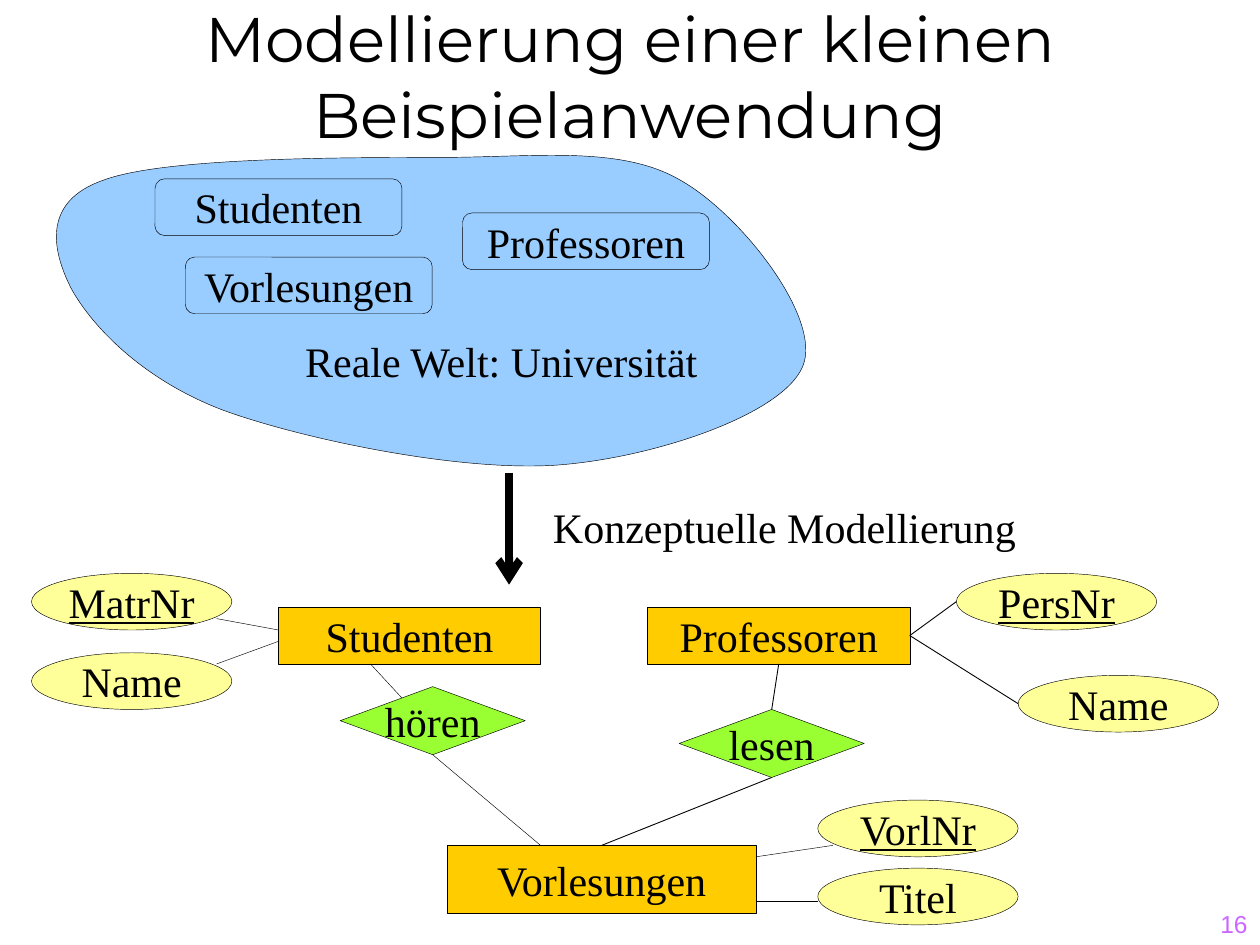
from pptx import Presentation
from pptx.dml.color import RGBColor
from pptx.enum.shapes import MSO_CONNECTOR, MSO_SHAPE
from pptx.enum.text import MSO_ANCHOR, PP_ALIGN
from pptx.oxml.ns import qn
from pptx.util import Pt
from lxml.etree import SubElement

COLORS = {
    "ink": "000000",
    "world": "99CCFF",
    "entity": "FFCC00",
    "attribute": "FFFF99",
    "relationship": "99FF33",
    "page": "CC66FF",
}
SERIF = "Times New Roman"
THIN, MEDIUM = 0.25, 0.5
TOP, BOTTOM, RIGHT = 0, 2, 3


def color(name):
    return RGBColor.from_string(COLORS[name])


def write(shape, text, size=24, font=SERIF, ink="ink", align=PP_ALIGN.CENTER,
          anchor=MSO_ANCHOR.MIDDLE, wrap=False, underline=None):
    frame = shape.text_frame
    frame.word_wrap = wrap
    frame.vertical_anchor = anchor
    paragraph = frame.paragraphs[0]
    paragraph.alignment = align
    run = paragraph.add_run()
    run.text = text
    run.font.size = Pt(size)
    run.font.name = font
    run.font.underline = underline
    run.font.color.rgb = color(ink)


def add_label(slide, box, text, **style):
    write(slide.shapes.add_textbox(*map(Pt, box)), text, **style)


def outline(shape, fill=None):
    shape.shadow.inherit = False
    if fill:
        shape.fill.solid()
        shape.fill.fore_color.rgb = color(fill)
    else:
        shape.fill.background()
    shape.line.color.rgb = color("ink")
    shape.line.width = Pt(THIN)


def add_node(slide, kind, box, text, fill=None, underline=None):
    shape = slide.shapes.add_shape(kind, *map(Pt, box))
    outline(shape, fill)
    write(shape, text, underline=underline)
    return shape


def add_line(slide, start, end, width=THIN):
    line = slide.shapes.add_connector(MSO_CONNECTOR.STRAIGHT, *map(Pt, start + end))
    line.line.color.rgb = color("ink")
    line.line.width = Pt(width)
    SubElement(line._element.spPr, qn("a:effectLst"))
    return line


def add_curve(slide, points):
    """Closed outline: a start point, then three points for each cubic curve."""
    points = [(Pt(x), Pt(y)) for x, y in points]
    builder = slide.shapes.build_freeform(*points[0])
    builder.add_line_segments(points[1:], close=True)
    shape = builder.convert_to_shape()
    straights = list(shape._element.iter(qn("a:lnTo")))
    for first, second, third in zip(*[iter(straights)] * 3):
        first.tag = qn("a:cubicBezTo")
        for straight in (second, third):
            first.append(straight[0])
            straight.getparent().remove(straight)
    return shape


def add_title(slide, box, text):
    title = slide.shapes.title
    title.left, title.top, title.width, title.height = map(Pt, box)
    write(title, text, size=36, font="Montserrat", anchor=MSO_ANCHOR.BOTTOM, wrap=True)


def add_real_world(slide, left, top):
    # Curved outline of the real world
    points = [
        (35.3, 20.2),
        (69.8, 7.2), (171.4, 7.2), (226.1, 7.2),
        (281.5, 7.2), (330.5, 0), (365, 20.2),
        (399.6, 39.6), (446.4, 99.4), (434.9, 126.7),
        (423.4, 154.1), (350.6, 178.6), (295.9, 182.9),
        (240.5, 187.2), (150.5, 168.5), (104.4, 151.9),
        (58.3, 134.6), (29.5, 104.4), (17.3, 82.8),
        (5.8, 60.5), (0, 32.4), (35.3, 20.2),
    ]
    outline(add_curve(slide, [(left + x, top + y) for x, y in points]), "world")

    # Things in the real world
    for text, x, y in (("Studenten", 64.8, 19.4), ("Vorlesungen", 82.1, 64.1),
                       ("Professoren", 240.5, 38.9)):
        add_node(slide, MSO_SHAPE.ROUNDED_RECTANGLE, (left + x, top + y, 141.1, 32.4), text)
    add_label(slide, (left + 142.5, top + 105.1, 240.5, 36), "Reale Welt: Universität",
              anchor=MSO_ANCHOR.TOP)


def add_modelling_step(slide, left, top):
    arrow = add_line(slide, (left, top), (left, top + 64.1), width=4.5)
    SubElement(arrow.line._get_or_add_ln(), qn("a:tailEnd"), type="arrow")
    add_label(slide, (left + 18, top + 13, 334.8, 36), "Konzeptuelle Modellierung",
              align=PP_ALIGN.LEFT, anchor=MSO_ANCHOR.TOP, wrap=True)


def add_entity_model(slide, left, top):
    def place(x, y):
        return left + x, top + y

    # Attributes, keys underlined
    for text, x, y, is_key in (
            ("PersNr", 528.5, 0, True), ("MatrNr", 0, 0, True),
            ("Name", 563.8, 58.3, None), ("Name", 0, 45.4, None),
            ("Titel", 449.3, 168.5, None), ("VorlNr", 449.3, 129.6, True)):
        add_node(slide, MSO_SHAPE.OVAL, place(x, y) + (114.5, 32.4), text,
                 "attribute", underline=is_key)

    # Entities
    add_node(slide, MSO_SHAPE.RECTANGLE, place(141.1, 19.4) + (149.8, 32.4),
             "Studenten", "entity")
    professors = add_node(slide, MSO_SHAPE.RECTANGLE, place(352.1, 19.4) + (149.8, 32.4),
                          "Professoren", "entity")
    lectures = add_node(slide, MSO_SHAPE.RECTANGLE, place(237.6, 155.5) + (176.4, 38.9),
                        "Vorlesungen", "entity")

    # Relationships
    attend, teach = (
        add_node(slide, MSO_SHAPE.DIAMOND, place(x, y) + (105.8, 38.9), text, "relationship")
        for text, x, y in (("hören", 176.4, 64.8), ("lesen", 370.1, 77.8)))

    # Links: start, end, width, joined start, joined end
    for start, end, width, source, target in (
            ((105.8, 25.9), (141.1, 32.4), THIN, None, None),
            ((105.8, 51.8), (141.1, 38.9), THIN, None, None),
            ((193.7, 51.8), (211.7, 71.3), THIN, None, None),
            ((229.3, 103.7), (290.9, 155.5), THIN, (attend, BOTTOM), None),
            ((414, 162), (457.9, 155.5), THIN, None, None),
            ((414, 187.2), (449.3, 187.2), THIN, None, None),
            ((501.9, 35.6), (528.5, 16.2), MEDIUM, (professors, RIGHT), None),
            ((501.9, 35.6), (563.8, 74.5), MEDIUM, (professors, RIGHT), None),
            ((427, 51.8), (423, 77.8), MEDIUM, (professors, BOTTOM), (teach, TOP)),
            ((423, 116.7), (325.8, 155.5), MEDIUM, (teach, BOTTOM), (lectures, TOP))):
        line = add_line(slide, place(*start), place(*end), width)
        if source:
            line.begin_connect(*source)
        if target:
            line.end_connect(*target)


def main():
    presentation = Presentation()
    presentation.slide_width, presentation.slide_height = Pt(720), Pt(540)
    slide = presentation.slides.add_slide(presentation.slide_layouts[5])
    add_title(slide, (0, 0, 720, 90), "Modellierung einer kleinen Beispielanwendung")
    add_real_world(slide, 23.8, 82.8)
    add_modelling_step(slide, 290.9, 270)
    add_entity_model(slide, 18, 327.6)
    # Page number
    add_label(slide, (570.2, 504, 149.8, 36), "16", size=14, font="Arial", ink="page",
              align=PP_ALIGN.RIGHT, anchor=MSO_ANCHOR.BOTTOM, wrap=True)
    presentation.save("out.pptx")


if __name__ == "__main__":
    main()
